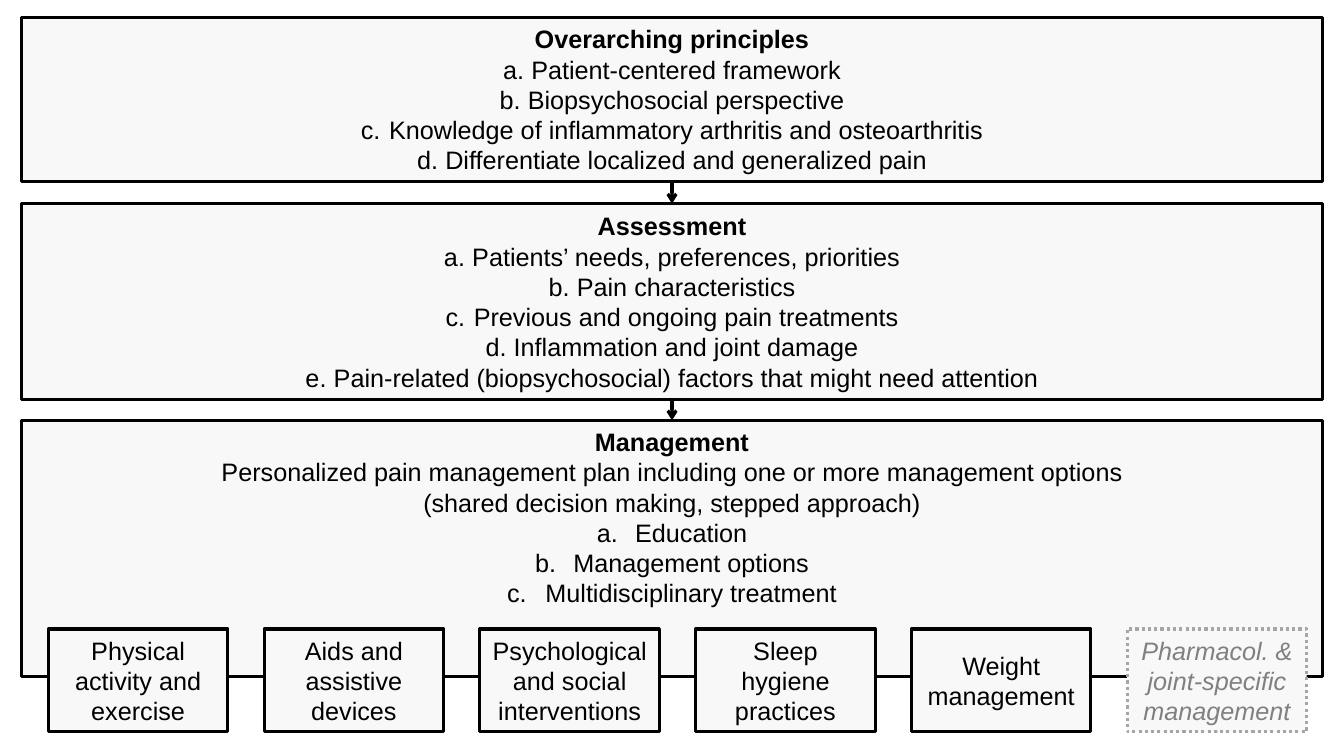
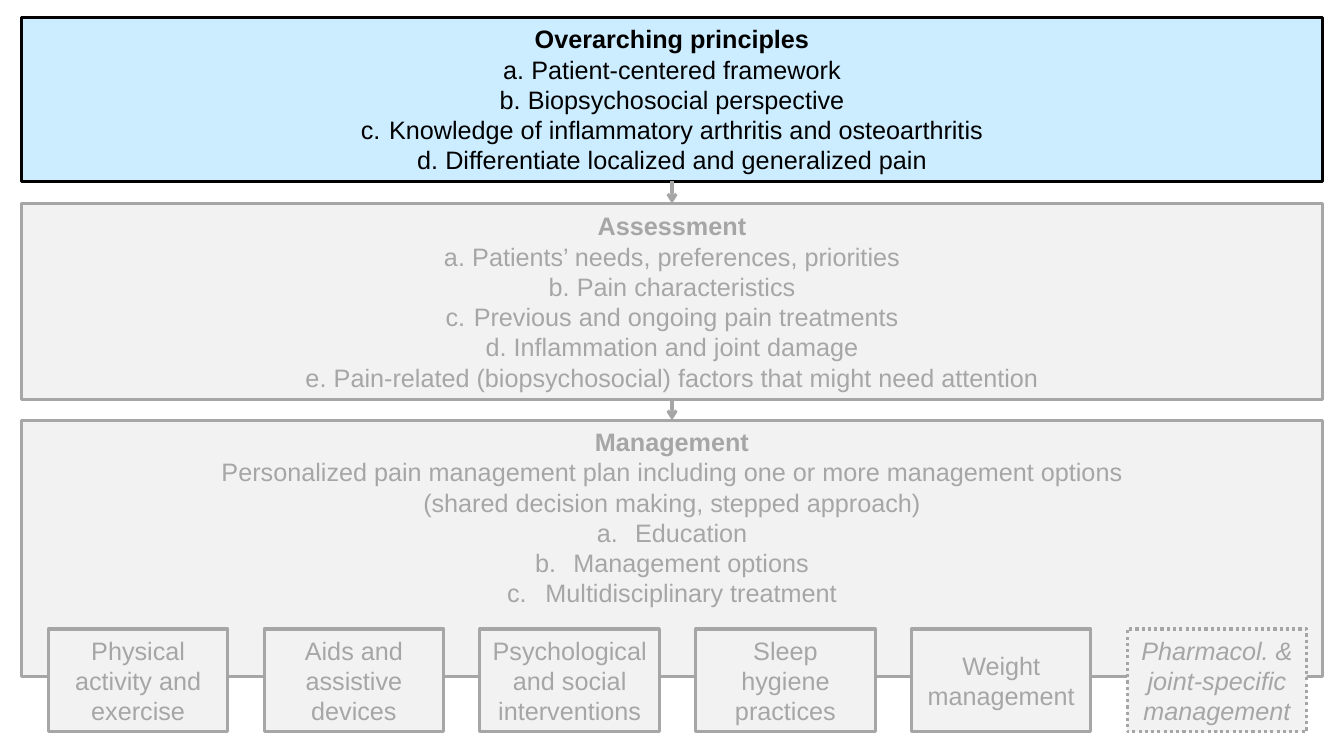
"""Builds two slides of a pain management flow: overview and highlighted principles."""
from dataclasses import dataclass

from lxml import etree
from pptx import Presentation
from pptx.dml.color import RGBColor
from pptx.enum.dml import MSO_LINE
from pptx.enum.shapes import MSO_CONNECTOR, MSO_SHAPE
from pptx.enum.text import MSO_ANCHOR, PP_ALIGN
from pptx.oxml.ns import qn
from pptx.util import Inches, Pt

RECTANGLE = MSO_SHAPE.RECTANGLE
STRAIGHT = MSO_CONNECTOR.STRAIGHT
DOTTED = MSO_LINE.ROUND_DOT
CENTER = PP_ALIGN.CENTER
TOP, MIDDLE = MSO_ANCHOR.TOP, MSO_ANCHOR.MIDDLE
TOP_SIDE, BOTTOM_SIDE = 0, 2
BLANK_LAYOUT = 6


@dataclass(frozen=True)
class Look:
    """Colours of one box."""
    fill: str
    line: str
    text: str


@dataclass(frozen=True)
class Theme:
    """Colours, type and line sizes shared by the slides."""
    font: str = "Arial"
    size: int = 18
    line_width: float = 2.25
    normal: Look = Look("F8F8F8", "000000", "000000")
    optional: Look = Look("F8F8F8", "A6A6A6", "808080")
    faded: Look = Look("F2F2F2", "A6A6A6", "A6A6A6")
    highlight: Look = Look("CCECFF", "000000", "000000")


@dataclass(frozen=True)
class Stage:
    """One full-width box: heading, plain lines and lettered items."""
    heading: str
    top: float
    height: float
    items: tuple
    lines: tuple = ()
    indent: float = 0.28
    anchor: MSO_ANCHOR = MIDDLE


THEME = Theme()
STAGE_LEFT, STAGE_WIDTH = 0.21, 12.91
OPTION_LEFT, OPTION_TOP, OPTION_PITCH = 0.48, 6.24, 2.14
OPTION_WIDTH, OPTION_HEIGHT = 1.78, 1.02

STAGES = (
    Stage("Overarching principles", 0.17, 1.63, (
        "Patient-centered framework",
        "Biopsychosocial perspective",
        "Knowledge of inflammatory arthritis and osteoarthritis",
        "Differentiate localized and generalized pain")),
    Stage("Assessment", 2.02, 1.94, (
        "Patients’ needs, preferences, priorities",
        "Pain characteristics",
        "Previous and ongoing pain treatments",
        "Inflammation and joint damage",
        "Pain-related (biopsychosocial) factors that might need attention")),
    Stage("Management", 4.17, 2.54,
          ("Education", "Management options", "Multidisciplinary treatment"),
          lines=("Personalized pain management plan including one or more management options",
                 "(shared decision making, stepped approach)"),
          indent=0.38, anchor=TOP),
)
OPTIONS = (
    ("Physical activity and exercise",),
    ("Aids and assistive devices",),
    ("Psychological and social interventions",),
    ("Sleep", "hygiene", "practices"),
    ("Weight management",),
)
OPTIONAL_OPTION = "Pharmacol. & joint-specific management"


def add_text(shape, text, color, bold=False, italic=False, letter_indent=None):
    """Append a centred paragraph, lettered when an indent is given."""
    frame = shape.text_frame
    paragraph = frame.paragraphs[0] if not frame.text else frame.add_paragraph()
    paragraph.alignment = CENTER
    if letter_indent:
        properties = paragraph._p.get_or_add_pPr()
        properties.set("marL", str(Inches(letter_indent)))
        properties.set("indent", str(-Inches(letter_indent)))
        etree.SubElement(properties, qn("a:buFont"), typeface="+mj-lt")
        etree.SubElement(properties, qn("a:buAutoNum"), type="alphaLcPeriod")
    run = paragraph.add_run()
    run.text = text
    font = run.font
    font.name, font.size = THEME.font, Pt(THEME.size)
    font.bold, font.italic = bold, italic
    font.color.rgb = RGBColor.from_string(color)


def style_line(line, color):
    """Set the shared line width and a colour."""
    line.width = Pt(THEME.line_width)
    line.color.rgb = RGBColor.from_string(color)


def add_box(slide, left, top, width, height, look, anchor=MIDDLE):
    """Add an empty outlined rectangle."""
    shape = slide.shapes.add_shape(
        RECTANGLE, Inches(left), Inches(top), Inches(width), Inches(height))
    shape.shadow.inherit = False
    shape.fill.solid()
    shape.fill.fore_color.rgb = RGBColor.from_string(look.fill)
    style_line(shape.line, look.line)
    frame = shape.text_frame
    frame.word_wrap = True
    frame.vertical_anchor = anchor
    frame.margin_left = frame.margin_right = Inches(0.09)
    frame.margin_top = frame.margin_bottom = Inches(0.06)
    return shape


def add_stage(slide, stage, look):
    """Add a full-width box with its heading, lines and lettered items."""
    shape = add_box(slide, STAGE_LEFT, stage.top, STAGE_WIDTH, stage.height,
                    look, stage.anchor)
    add_text(shape, stage.heading, look.text, bold=True)
    for line in stage.lines:
        add_text(shape, line, look.text)
    for item in stage.items:
        add_text(shape, item, look.text, letter_indent=stage.indent)
    return shape


def add_option(slide, column, paragraphs, look, optional=False):
    """Add one management option; an optional one is dotted and italic."""
    shape = add_box(slide, OPTION_LEFT + column * OPTION_PITCH, OPTION_TOP,
                    OPTION_WIDTH, OPTION_HEIGHT, look)
    if optional:
        shape.line.dash_style = DOTTED
    for text in paragraphs:
        add_text(shape, text, look.text, italic=optional)


def add_arrow(slide, upper, lower, color):
    """Join two stacked boxes with an arrow."""
    connector = slide.shapes.add_connector(STRAIGHT, 0, 0, 0, 0)
    connector.begin_connect(upper, BOTTOM_SIDE)
    connector.end_connect(lower, TOP_SIDE)
    style_line(connector.line, color)
    etree.SubElement(connector.line._get_or_add_ln(), qn("a:tailEnd"), type="arrow")
    etree.SubElement(connector._element.spPr, qn("a:effectLst"))


def add_flow_slide(presentation, first_look, look, optional_look):
    """Add the whole flow; the first stage has a look of its own."""
    slide = presentation.slides.add_slide(presentation.slide_layouts[BLANK_LAYOUT])
    looks = (first_look, look, look)
    boxes = [add_stage(slide, stage, stage_look)
             for stage, stage_look in zip(STAGES, looks)]
    for upper, lower in zip(boxes, boxes[1:]):
        add_arrow(slide, upper, lower, look.line)
    for column, paragraphs in enumerate(OPTIONS):
        add_option(slide, column, paragraphs, look)
    add_option(slide, len(OPTIONS), (OPTIONAL_OPTION,), optional_look, optional=True)


def main():
    """Build and save the presentation."""
    presentation = Presentation()
    presentation.slide_width = Inches(13.33)
    presentation.slide_height = Inches(7.5)
    add_flow_slide(presentation, THEME.normal, THEME.normal, THEME.optional)
    add_flow_slide(presentation, THEME.highlight, THEME.faded, THEME.faded)
    presentation.save("out.pptx")


if __name__ == "__main__":
    main()
